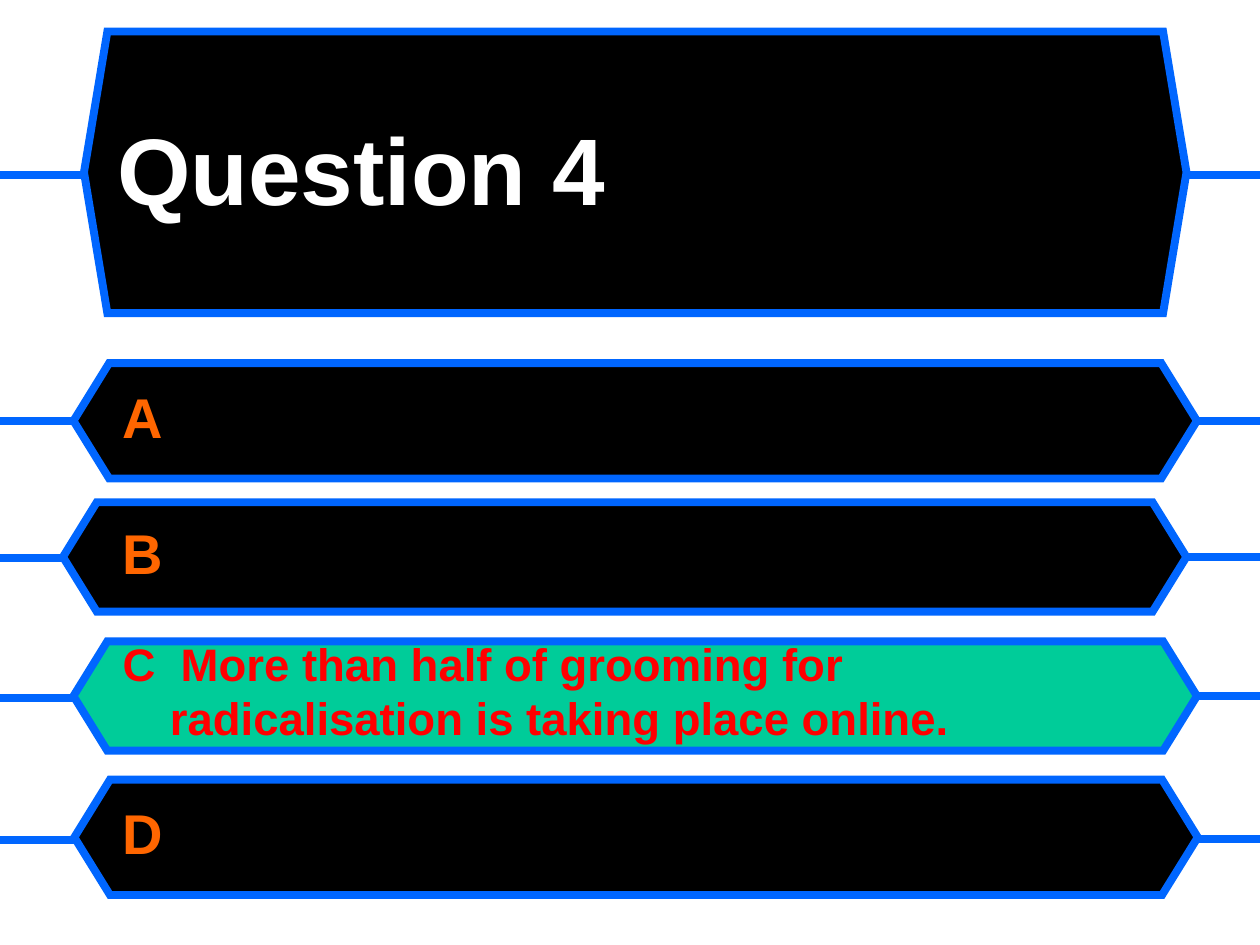
from pptx import Presentation
from pptx.dml.color import RGBColor
from pptx.enum.shapes import MSO_CONNECTOR as Link, MSO_SHAPE as Kind
from pptx.enum.text import MSO_ANCHOR as Anchor
from pptx.oxml.ns import qn
from pptx.util import Pt
from lxml.etree import SubElement

WIDE, HIGH = 720, 540
BLUE, BLACK, GREEN = "0066FF", "000000", "00CC99"
WHITE, ORANGE, RED = "FFFFFF", "FF6600", "FF0000"

# box, point depth, fill, heights of the left and right wires
BARS = [
    ((48, 18, 630, 161), 0.083, BLACK, (100, 100)),
    ((42, 207.5, 642, 66), 0.309, BLACK, (240.5, 240.5)),
    ((36, 287, 642, 62.5), 0.309, BLACK, (319, 318.25)),
    ((42, 366.5, 642, 62.5), 0.309, GREEN, (399, 397.5)),
    ((42.5, 445.5, 642, 66), 0.309, BLACK, (480, 479.5)),
]

# text, size, colour, space before
ANSWERS = [
    ("A", 32, ORANGE, 0),
    ("B", 32, ORANGE, 39.5),
    ("C  More than half of grooming for radicalisation is taking place online.",
     26, RED, 28.5),
    ("D", 32, ORANGE, 30.5),
]


def color(code):
    return RGBColor.from_string(code)


def edge(line):
    line.color.rgb = color(BLUE)
    line.width = Pt(4.5)


def wire(slide, start, end, y):
    link = slide.shapes.add_connector(
        Link.STRAIGHT, Pt(start), Pt(y), Pt(end), Pt(y))
    edge(link.line)
    SubElement(link._element.spPr, qn("a:effectLst"))


def add_bar(slide, box, depth, fill, wires):
    """A hexagon with a wire from each point to the slide's edge."""
    left, top, wide, high = box
    bar = slide.shapes.add_shape(Kind.HEXAGON, *map(Pt, box))
    bar.shadow.inherit = False
    bar.adjustments[0] = depth
    bar.fill.solid()
    bar.fill.fore_color.rgb = color(fill)
    edge(bar.line)
    # Sharp corners
    SubElement(bar._element.spPr.find(qn("a:ln")), qn("a:miter"), lim="800000")
    wire(slide, left, 0, wires[0])
    wire(slide, WIDE, left + wide, wires[1])


def add_frame(slide, box, anchor):
    frame = slide.shapes.add_textbox(*map(Pt, box)).text_frame
    frame.word_wrap = True
    frame.vertical_anchor = anchor
    return frame


def add_run(para, text, size, tint):
    run = para.add_run()
    run.text = text
    font = run.font
    font.name, font.size, font.bold = "Arial", Pt(size), True
    font.color.rgb = color(tint)


def add_title(slide, box):
    frame = add_frame(slide, box, Anchor.MIDDLE)
    add_run(frame.paragraphs[0], "Question 4", 54, WHITE)


def add_answers(slide, box):
    """One hanging paragraph for each answer bar."""
    frame = add_frame(slide, box, Anchor.TOP)
    frame.margin_right = Pt(12)
    for i, (text, size, tint, gap) in enumerate(ANSWERS):
        para = frame.add_paragraph() if i else frame.paragraphs[0]
        props = para._p.get_or_add_pPr()
        props.set("marL", str(Pt(27)))
        props.set("indent", str(-Pt(27)))
        if gap:
            para.space_before = Pt(gap)
        add_run(para, text, size, tint)


def main():
    deck = Presentation()
    deck.slide_width, deck.slide_height = Pt(WIDE), Pt(HIGH)
    slide = deck.slides.add_slide(deck.slide_layouts[6])
    # Bars with their wires
    for bar in BARS:
        add_bar(slide, *bar)
    # Question and answers
    add_title(slide, (60, 15, 606, 162))
    add_answers(slide, (63, 215, 600, 312))
    deck.save("out.pptx")


if __name__ == "__main__":
    main()
